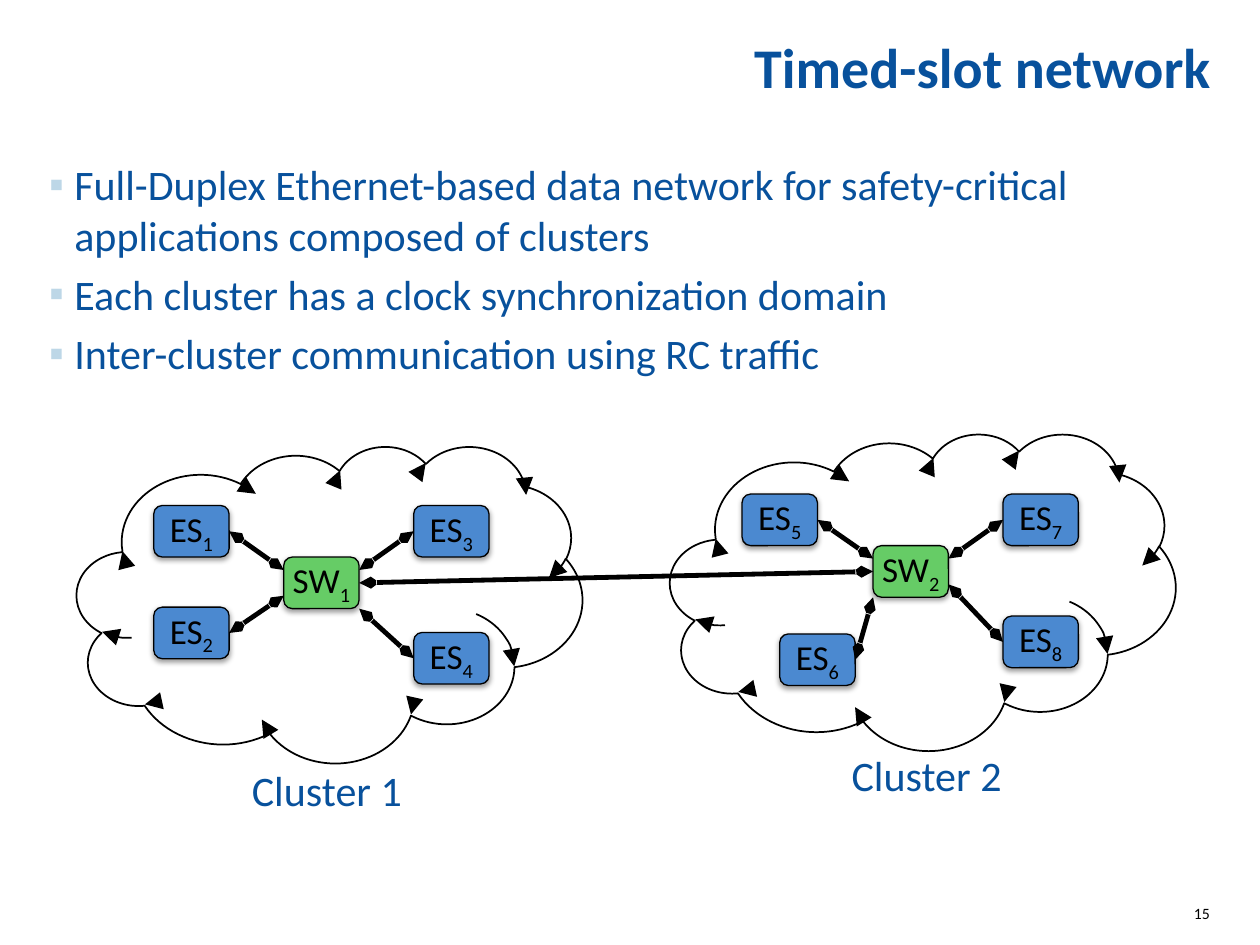
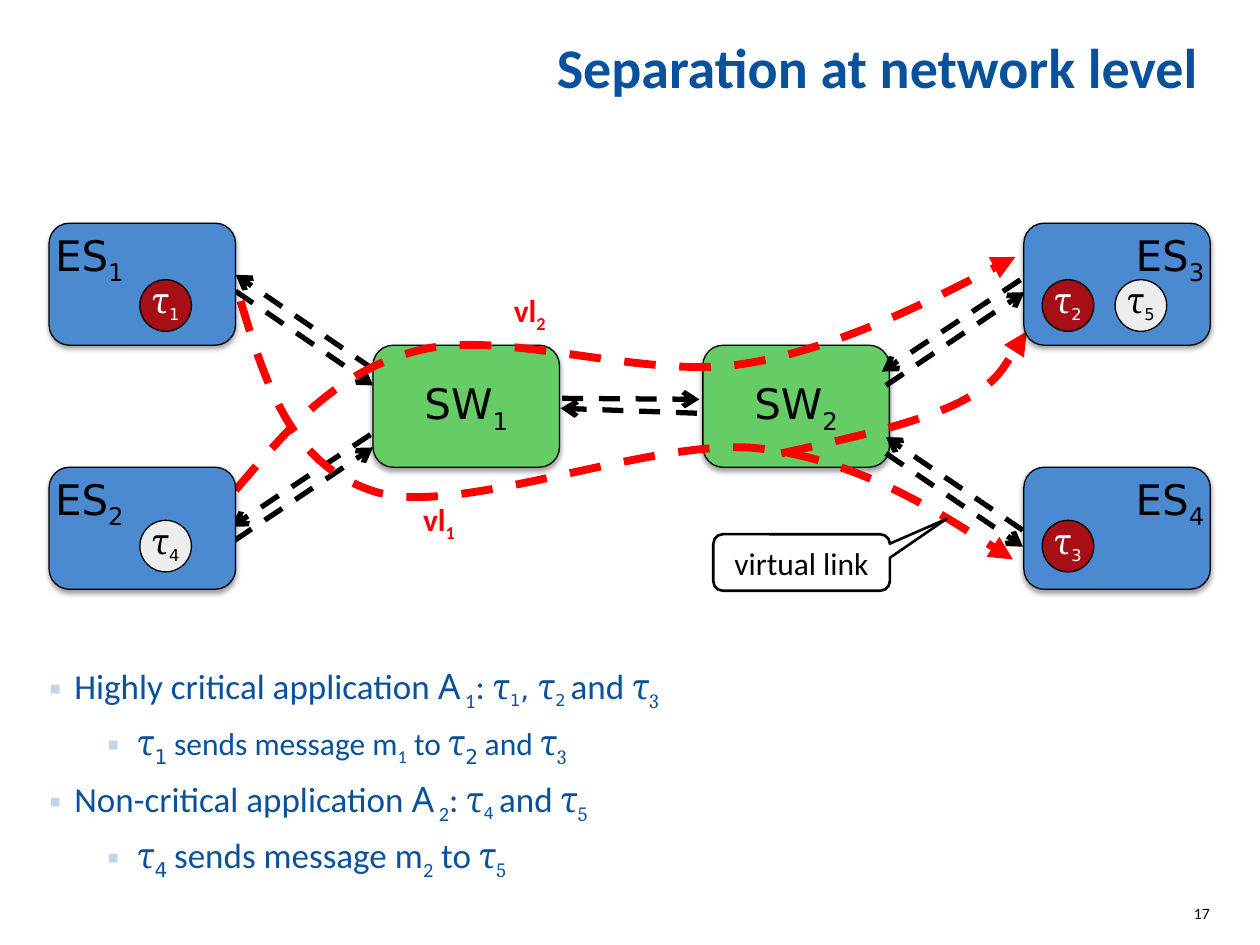
from dataclasses import dataclass

from pptx import Presentation
from pptx.dml.color import RGBColor
from pptx.enum.dml import MSO_LINE
from pptx.enum.shapes import MSO_CONNECTOR, MSO_SHAPE
from pptx.enum.text import MSO_ANCHOR, MSO_AUTO_SIZE, PP_ALIGN
from pptx.oxml.ns import qn
from pptx.oxml.xmlchemy import OxmlElement
from pptx.util import Cm, Pt

NAVY, BULLET, BLACK, WHITE = "08519C", "BDD7E7", "000000", "FFFFFF"
STATION, SWITCH, CRITICAL, NORMAL, LINK = "4B89D0", "66CC66", "A50F15", "EDEDED", "FF0000"
BODY, MONO, GREEK, LETTER = "Calibri", "DejaVu Sans", "Cambria", "Noto Sans"
MARGIN = 0.99


@dataclass(frozen=True)
class Run:
    text: str
    size: int = 20
    font: str = BODY
    sub: bool = False


@dataclass(frozen=True)
class Station:
    number: int
    dx: float
    dy: float
    port: float


@dataclass(frozen=True)
class Cluster:
    number: int
    x: float
    y: float
    cloud: tuple[float, float]
    caption: tuple[float, float]
    stations: tuple[Station, ...]


@dataclass(frozen=True)
class Task:
    number: int
    x: float
    y: float
    critical: bool


CLUSTERS = (
    Cluster(1, 5.72, 11.23, (1.55, 8.99), (1.42, 15.42), (
        Station(1, -2.62, -1.04, 0.25), Station(2, -2.62, 1.01, 0.75),
        Station(3, 2.62, -1.04, 0.25), Station(4, 2.62, 1.52, 1))),
    Cluster(2, 17.6, 11, (13.51, 8.74), (13.51, 15.11), (
        Station(5, -2.64, -1.04, 0.25), Station(6, -1.88, 1.78, 1),
        Station(7, 2.62, -1.04, 0.25), Station(8, 2.62, 1.42, 0.75))),
)
NODE_W, NODE_H = 1.52, 1.04

BOX_W, BOX_H = 3.76, 2.46
LEFT, RIGHT, TOP, BOTTOM = MARGIN, 20.64, 4.5, 9.42
SWITCHES = ((1, 7.52), (2, 14.17))
END_SYSTEMS = (
    (1, LEFT, TOP), (2, LEFT, BOTTOM), (3, RIGHT, TOP), (4, RIGHT, BOTTOM))
TASKS = (
    Task(1, 2.82, 5.64, True), Task(4, 2.82, 10.49, False),
    Task(2, 21.01, 5.64, True), Task(5, 22.48, 5.64, False),
    Task(3, 21.01, 10.49, True))
WIRES = (
    (4.75, 5.87, 7.52, 7.77), (7.52, 7.44, 4.75, 5.54),
    (4.72, 10.9, 7.52, 9.02), (7.47, 8.76, 4.67, 10.62),
    (17.86, 9.14, 20.62, 11.02), (20.62, 10.69, 17.86, 8.81),
    (17.86, 7.77, 20.65, 5.89), (20.57, 5.64, 17.78, 7.49),
    (11.33, 8.03, 14.1, 8.05), (14.05, 8.33, 11.3, 8.23))
VIRTUAL_LINKS = (
    ((4.75, 9.88), (5.77, 8.69), (6.76, 7.47), (8.46, 7.06),
     (10.16, 6.63), (12.95, 7.65), (14.96, 7.34),
     (16.97, 7.04), (20.47, 5.18), (20.47, 5.18)),
    ((15.75, 9.14), (17.12, 8.84), (18.49, 8.53), (19.3, 8.13),
     (20.14, 7.72), (20.7, 6.68), (20.7, 6.68)),
    ((4.85, 6.07), (5.36, 7.75), (5.87, 9.42), (7.62, 9.93),
     (9.37, 10.41), (13.16, 8.81), (15.29, 9.04),
     (17.42, 9.27), (20.42, 11.28), (20.42, 11.28)))


def rgb(value: str) -> RGBColor:
    return RGBColor.from_string(value)


def element(parent, tag: str, **attributes):
    child = OxmlElement(tag)
    for name, value in attributes.items():
        child.set(name, str(value))
    parent.append(child)
    return child


def place(sp, x: float, y: float, w: float, h: float) -> None:
    sp.left, sp.top, sp.width, sp.height = Cm(x), Cm(y), Cm(w), Cm(h)


def set_frame(sp, anchor=MSO_ANCHOR.TOP):
    tf = sp.text_frame
    tf.word_wrap = True
    tf.auto_size = MSO_AUTO_SIZE.NONE
    tf.margin_left = tf.margin_top = tf.margin_right = tf.margin_bottom = Cm(0)
    tf.vertical_anchor = anchor
    return tf


def write(p, runs: list[Run], color: str, align=PP_ALIGN.LEFT, bold: bool = False) -> None:
    p.alignment = align
    for run in runs:
        r = p.add_run()
        r.text = run.text
        r.font.size, r.font.name, r.font.bold = Pt(run.size), run.font, bold
        r.font.color.rgb = rgb(color)
        if run.sub:
            r.font._element.set("baseline", "-25000")


def indexed(name: str, number: int, size: int, font: str = BODY) -> list[Run]:
    return [Run(name, size, font), Run(str(number), size, font, True)]


def tau(index: str, size: int = 16, font: str = MONO) -> list[Run]:
    return [Run("τ", 20, GREEK), Run(index, size, font, True)]


def add_text(s, x: float, y: float, w: float, h: float, runs: list[Run], color: str,
             align) -> None:
    sp = s.shapes.add_textbox(Cm(x), Cm(y), Cm(w), Cm(h))
    write(set_frame(sp).paragraphs[0], runs, color, align)


def add_box(s, kind, x: float, y: float, w: float, h: float, fill: str | None = None,
            line_width: float = 0.75, shadow: bool = False):
    sp = s.shapes.add_shape(kind, Cm(x), Cm(y), Cm(w), Cm(h))
    if fill:
        sp.fill.solid()
        sp.fill.fore_color.rgb = rgb(fill)
    else:
        sp.fill.background()
    sp.line.color.rgb = rgb(BLACK)
    sp.line.width = Pt(line_width)
    sp.shadow.inherit = False
    if shadow:
        effects = sp._element.spPr.find(qn("a:effectLst"))
        outer = element(effects, "a:outerShdw", blurRad=Pt(3.1), dist=Pt(1.6),
                        dir=5400000, rotWithShape=0)
        element(element(outer, "a:srgbClr", val=BLACK), "a:alpha", val=38000)
    return sp


def add_node(s, x: float, y: float, w: float, h: float, fill: str, runs: list[Run],
             align=PP_ALIGN.CENTER, anchor=MSO_ANCHOR.MIDDLE) -> None:
    sp = add_box(s, MSO_SHAPE.ROUNDED_RECTANGLE, x, y, w, h, fill, shadow=True)
    write(set_frame(sp, anchor).paragraphs[0], runs, BLACK, align)


def style_line(sp, color: str, width: float, dashed: bool, head: str, tail: str,
               tip_width: str = "med", tip_length: str = "med") -> None:
    sp.line.color.rgb = rgb(color)
    sp.line.width = Pt(width)
    if dashed:
        sp.line.dash_style = MSO_LINE.DASH
    ln = sp.line._get_or_add_ln()
    for tag, kind in (("a:headEnd", head), ("a:tailEnd", tail)):
        element(ln, tag, type=kind, w=tip_width, len=tip_length)


def add_wire(s, ends: tuple[float, ...], width: float, dashed: bool, head: str,
             tip_width: str = "med") -> None:
    sp = s.shapes.add_connector(MSO_CONNECTOR.STRAIGHT, *(Cm(v) for v in ends))
    style_line(sp, BLACK, width, dashed, head, "arrow", tip_width)
    element(sp._element.spPr, "a:effectLst")


def add_curve(s, points: tuple[tuple[float, float], ...]) -> None:
    start, *rest = [(Cm(x), Cm(y)) for x, y in points]
    builder = s.shapes.build_freeform(*start)
    builder.add_line_segments(rest, close=False)
    sp = builder.convert_to_shape()
    steps = list(sp._element.iter(qn("a:lnTo")))
    outline = steps[0].getparent()
    for i in range(0, len(steps), 3):
        curve = element(outline, "a:cubicBezTo")
        for step in steps[i:i + 3]:
            curve.append(step[0])
            outline.remove(step)
    sp.fill.background()
    sp.shadow.inherit = False
    style_line(sp, LINK, 4.5, True, "none", "triangle")


def add_slide(prs, title: str, number: int):
    s = prs.slides.add_slide(prs.slide_layouts[1])
    place(s.shapes.title, MARGIN, 0, 23.42, 2.01)
    p = set_frame(s.shapes.title, MSO_ANCHOR.BOTTOM).paragraphs[0]
    write(p, [Run(title, 32)], NAVY, PP_ALIGN.RIGHT, bold=True)
    p.line_spacing = 0.8
    add_text(s, 23.55, 18.21, 0.84, 0.84, [Run(str(number), 9)], BLACK, PP_ALIGN.RIGHT)
    return s


def fill_body(s, box: tuple[float, ...], items: list[tuple[int, list[Run]]]) -> None:
    body = s.placeholders[1]
    place(body, *box)
    tf = set_frame(body)
    for i, (level, runs) in enumerate(items):
        p = tf.add_paragraph() if i else tf.paragraphs[0]
        p.level = level
        write(p, runs, NAVY)
        p.space_before = Pt(5)
        pPr = p._p.get_or_add_pPr()
        pPr.set("marL", str(Cm(0.51 + 1.27 * level)))
        pPr.set("indent", str(Cm(-0.61)))
        element(element(pPr, "a:buClr"), "a:srgbClr", val=BULLET)
        element(pPr, "a:buChar", char="▪")


def add_cluster(s, cluster: Cluster) -> None:
    for station in cluster.stations:
        x, y = cluster.x + station.dx, cluster.y + station.dy
        add_node(s, x, y, NODE_W, NODE_H, STATION, indexed("ES", station.number, 20))
        on_left = station.dx < 0
        ends = (x + NODE_W * on_left, y + NODE_H / 2,
                cluster.x + NODE_W * (not on_left), cluster.y + NODE_H * station.port)
        add_wire(s, ends, 2.75, False, "arrow", "sm")
    add_node(s, cluster.x, cluster.y, NODE_W, NODE_H, SWITCH, indexed("SW", cluster.number, 20))
    cloud = add_box(s, MSO_SHAPE.CLOUD, *cluster.cloud, 10.19, 6.38)
    style_line(cloud, BLACK, 1, False, "none", "triangle", "lg", "lg")
    add_text(s, *cluster.caption, 10.34, 1.7, [Run(f"Cluster {cluster.number}", 24)],
             NAVY, PP_ALIGN.CENTER)


def build_network(prs) -> None:
    s = add_slide(prs, "Timed-slot network", 15)
    points = (
        "Full-Duplex Ethernet-based data network for safety-critical "
        "applications composed of clusters",
        "Each cluster has a clock synchronization domain",
        "Inter-cluster communication using RC traffic")
    fill_body(s, (MARGIN, 3.2, 23.39, 3.58), [(0, [Run(text, 24)]) for text in points])
    for cluster in CLUSTERS:
        add_cluster(s, cluster)
    first, second = CLUSTERS
    trunk = (first.x + NODE_W, first.y + NODE_H / 2, second.x, second.y + NODE_H / 2)
    add_wire(s, trunk, 2.75, False, "arrow", "sm")


def build_separation(prs) -> None:
    s = add_slide(prs, "Separation at network level ", 17)
    for number, x in SWITCHES:
        add_node(s, x, 6.96, BOX_W, BOX_H, SWITCH, indexed("SW", number, 24, MONO))
    for wire in WIRES:
        add_wire(s, wire, 3, True, "none")
    for points in VIRTUAL_LINKS:
        add_curve(s, points)
    for number, x, y in ((2, 10.11, 5.74), (1, 8.28, 9.96)):
        sp = s.shapes.add_textbox(Cm(x), Cm(y), Cm(1.35), Cm(1.02))
        sp.text_frame.word_wrap = True
        write(sp.text_frame.paragraphs[0], indexed("vl", number, 18), LINK, bold=True)
    for number, x, y in END_SYSTEMS:
        align = PP_ALIGN.LEFT if x == LEFT else PP_ALIGN.RIGHT
        add_node(s, x, y, BOX_W, BOX_H, STATION, indexed("ES", number, 24, MONO),
                 align, MSO_ANCHOR.TOP)
    for task in TASKS:
        sp = add_box(s, MSO_SHAPE.OVAL, task.x, task.y, 1.04, 1.04,
                     CRITICAL if task.critical else NORMAL)
        write(set_frame(sp, MSO_ANCHOR.BOTTOM).paragraphs[0], tau(str(task.number)),
              WHITE if task.critical else BLACK, PP_ALIGN.CENTER)
    last = {n: tau(n, 20, GREEK) for n in ("3", "5")}
    fill_body(s, (MARGIN, 13.39, 16.94, 1.78), [
        (0, [Run("Highly critical application "), Run("A", font=LETTER), Run(" 1", sub=True),
             Run(": "), *tau("1"), Run(", ", 16, MONO), *tau("2 "), Run("and "), *last["3"]]),
        (1, [*tau("1 ", 20), *indexed("sends message m", 1, 18), Run(" to ", 18),
             *tau("2 ", 20), Run("and ", 18), *last["3"]]),
        (0, [Run("Non-critical application "), Run("A", font=LETTER), Run(" 2", sub=True),
             Run(": "), *tau("4 "), Run("and "), *last["5"]]),
        (1, [*tau("4 ", 20), *indexed("sends message m", 2, 20), Run(" to "), *last["5"]])])
    callout = add_box(s, MSO_SHAPE.ROUNDED_RECTANGULAR_CALLOUT, 14.38, 10.77, 3.56, 1.14,
                      line_width=1.5)
    for i, value in enumerate((0.82, -0.77, 0.17)):
        callout.adjustments[i] = value
    write(set_frame(callout, MSO_ANCHOR.MIDDLE).paragraphs[0], [Run("virtual link", 18)],
          BLACK, PP_ALIGN.CENTER)


def main() -> None:
    prs = Presentation()
    prs.slide_width, prs.slide_height = Cm(25.4), Cm(19.05)
    build_network(prs)
    build_separation(prs)
    prs.save("out.pptx")


if __name__ == "__main__":
    main()
